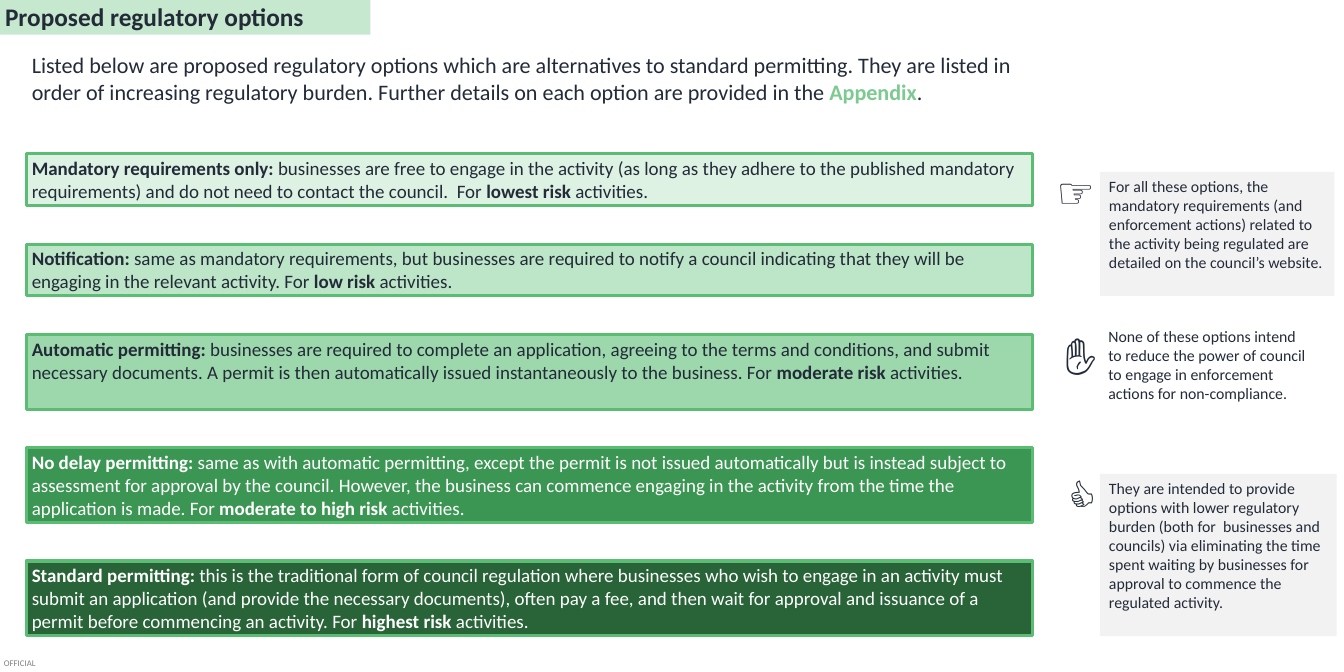
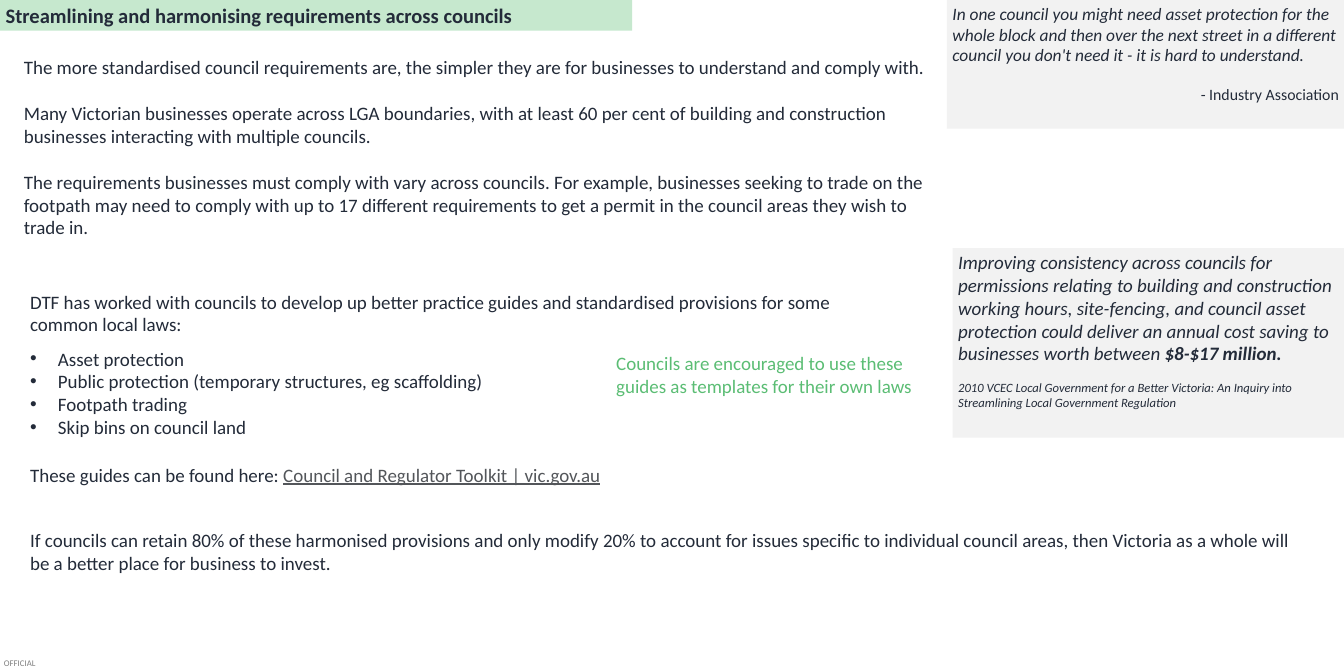
import pptx
import pptx.util
import pptx.dml.color
import pptx.enum.shapes
import pptx.enum.text
import lxml.etree
from dataclasses import dataclass
from typing import NamedTuple, Optional

# Shared look
SCALE = 9144  # EMU per px, 100 px to the inch
FONT = "Calibri"
INK, WHITE, GREY = "232B39", "FFFFFF", "F2F2F2"
BAND, EDGE, LIGHT = "C6E8CE", "5BBD74", "7CCA90"
LINK, MUTED = "53565A", "7F7F7F"
ALIGN = pptx.enum.text.PP_ALIGN


class Box(NamedTuple):
    left: int
    top: int
    width: int
    height: int


@dataclass(frozen=True)
class Run:
    text: str
    bold: bool = False
    slant: bool = False
    under: bool = False
    color: str = ""


@dataclass(frozen=True)
class Para:
    runs: list[Run]
    size: int = 24
    gap: float = 0  # points above
    right: bool = False
    bullet: bool = False


@dataclass(frozen=True)
class Option:
    name: str
    body: str
    risk: str
    fill: str
    color: str
    height: int


@dataclass(frozen=True)
class Note:
    icon: str
    spot: Box
    text: str
    box: Box
    fill: str
    pad: tuple[int, int]


def px(count: int) -> int:
    return pptx.util.Emu(count * SCALE)


def rgb(code: str) -> pptx.dml.color.RGBColor:
    return pptx.dml.color.RGBColor.from_string(code)


def plain(text: str, size: int = 24, gap: float = 0) -> Para:
    return Para([Run(text)], size, gap)


def dot(para) -> None:
    """Give a paragraph a hanging bullet."""
    props = para._p.get_or_add_pPr()
    props.set("marL", str(px(49)))
    props.set("indent", str(-px(49)))
    space = "{http://schemas.openxmlformats.org/drawingml/2006/main}"
    lxml.etree.SubElement(props, space + "buFont", typeface="Arial")
    lxml.etree.SubElement(props, space + "buChar", char="•")


def write(shape, paras: list[Para], color: str, pad: tuple[int, int]) -> None:
    frame = shape.text_frame
    frame.word_wrap = True
    frame.vertical_anchor = pptx.enum.text.MSO_ANCHOR.TOP
    frame.margin_left = frame.margin_right = px(pad[0])
    frame.margin_top = frame.margin_bottom = px(pad[1])
    for index, item in enumerate(paras):
        para = frame.add_paragraph() if index else frame.paragraphs[0]
        para.alignment = ALIGN.RIGHT if item.right else ALIGN.LEFT
        para.space_before = pptx.util.Pt(item.gap)
        if item.bullet:
            dot(para)
        for part in item.runs:
            run = para.add_run()
            run.text = part.text
            font = run.font
            font.name = FONT
            font.size = pptx.util.Pt(item.size)
            font.bold = part.bold
            font.italic = part.slant
            font.underline = part.under
            font.color.rgb = rgb(part.color or color)


def label(slide, box: Box, paras: list[Para], color: str = INK,
          pad: tuple[int, int] = (10, 5)) -> None:
    write(slide.shapes.add_textbox(*map(px, box)), paras, color, pad)


def panel(slide, box: Box, paras: list[Para], fill: str, color: str = INK,
          edge: Optional[str] = None, pad: tuple[int, int] = (10, 5)) -> None:
    kind = pptx.enum.shapes.MSO_SHAPE.RECTANGLE
    shape = slide.shapes.add_shape(kind, *map(px, box))
    shape.shadow.inherit = False
    shape.fill.solid()
    shape.fill.fore_color.rgb = rgb(fill)
    if edge:
        shape.line.color.rgb = rgb(edge)
        shape.line.width = pptx.util.Pt(4)
    else:
        shape.line.fill.background()
    write(shape, paras, color, pad)


def start(deck, title: str, box: Box, size: int):
    """Add a slide with its footer mark and title band."""
    slide = deck.slides.add_slide(deck.slide_layouts[6])
    label(slide, Box(7, 1156, 59, 18), [plain("OFFICIAL", 11)], MUTED, (0, 0))
    panel(slide, box, [Para([Run(title, bold=True)], size)], BAND)
    return slide


# Slide 1 content
OPTIONS = [
    Option("Mandatory requirements only: ",
           "businesses are free to engage in the activity (as long as they adhere to the "
           "published mandatory requirements) and do not need to contact the council.  For ",
           "lowest risk ", "DEF2E3", INK, 91),
    Option("Notification: ",
           "same as mandatory requirements, but businesses are required to notify a council "
           "indicating that they will be engaging in the relevant activity. For ",
           "low risk ", "BDE5C7", INK, 91),
    Option("Automatic permitting: ",
           "businesses are required to complete an application, agreeing to the terms and "
           "conditions, and submit necessary documents. A permit is then automatically issued "
           "instantaneously to the business. For ",
           "moderate risk ", "9DD7AC", INK, 131),
    Option("No delay permitting: ",
           "same as with automatic permitting, except the permit is not issued automatically "
           "but is instead subject to assessment for approval by the council. However, the "
           "business can commence engaging in the activity from the time the application is "
           "made. For ",
           "moderate to high risk ", "3C9653", WHITE, 131),
    Option("Standard permitting:",
           " this is the traditional form of council regulation where businesses who wish to "
           "engage in an activity must submit an application (and provide the necessary "
           "documents), often pay a fee, and then wait for approval and issuance of a permit "
           "before commencing an activity. For ",
           "highest risk ", "286437", WHITE, 131),
]
NOTES = [
    Note("☞", Box(1847, 286, 91, 101),
         "For all these options, the mandatory requirements (and enforcement actions) related "
         "to the activity being regulated are detailed on the council’s website.",
         Box(1933, 302, 412, 218), GREY, (16, 8)),
    Note("✋", Box(1861, 569, 91, 101),
         "None of these options intend to reduce the power of council to engage in "
         "enforcement actions for non-compliance.",
         Box(1938, 569, 378, 212), "", (10, 5)),
    Note("👍", Box(1867, 821, 71, 101),
         "They are intended to provide options with lower regulatory burden (both for  "
         "businesses and councils) via eliminating the time spent waiting by businesses for "
         "approval to commence the regulated activity.",
         Box(1933, 833, 416, 285), GREY, (16, 8)),
]


def choices(deck) -> None:
    slide = start(deck, "Proposed regulatory options", Box(-1, -3, 652, 64), 32)
    label(slide, Box(46, 86, 1828, 151), [Para([
        Run("Listed below are proposed regulatory options which are alternatives to standard "
            "permitting. They are listed in order of increasing regulatory burden. Further "
            "details on each option are provided in the "),
        Run("Appendix", bold=True, color=LIGHT),
        Run("."),
    ], 28)])

    # Options, stacked with equal gaps
    top, gap = 270, 68
    for item in OPTIONS:
        runs = [Run(item.name, bold=True), Run(item.body),
                Run(item.risk, bold=True), Run("activities.")]
        panel(slide, Box(46, top, 1768, item.height), [Para(runs)],
              item.fill, item.color, EDGE)
        top += item.height + gap

    # Side notes with icons
    for note in NOTES:
        paras = [plain(note.text, 20)]
        if note.fill:
            panel(slide, note.box, paras, note.fill, pad=note.pad)
        else:
            label(slide, note.box, paras, pad=note.pad)
        label(slide, note.spot, [plain(note.icon, 54)])


# Slide 2 content
REASONS = [
    "The more standardised council requirements are, the simpler they are for businesses to "
    "understand and comply with.",
    "Many Victorian businesses operate across LGA boundaries, with at least 60 per cent of "
    "building and construction businesses interacting with multiple councils.",
    "The requirements businesses must comply with vary across councils. For example, "
    "businesses seeking to trade on the footpath may need to comply with up to 17 different "
    "requirements to get a permit in the council areas they wish to trade in.",
]
GUIDES = ["Asset protection", "Public protection (temporary structures, eg scaffolding)",
          "Footpath trading", "Skip bins on council land"]


def harmony(deck) -> None:
    slide = start(deck, "Streamlining and harmonising requirements across councils",
                  Box(0, 0, 1111, 54), 26)

    # Main column
    label(slide, Box(32, 93, 1609, 374),
          [plain(text, gap=29.3 if index else 0) for index, text in enumerate(REASONS)])
    label(slide, Box(43, 505, 1464, 91), [plain(
        "DTF has worked with councils to develop up better practice guides and standardised "
        "provisions for some common local laws:")])
    label(slide, Box(43, 605, 997, 172), [Para([Run(text)], bullet=True) for text in GUIDES])
    label(slide, Box(1073, 613, 568, 131), [plain(
        "Councils are encouraged to use these guides as templates for their own laws")], EDGE)
    label(slide, Box(43, 809, 1609, 50), [Para([
        Run("These guides can be found here: "),
        Run("Council and Regulator Toolkit | vic.gov.au", under=True, color=LINK),
    ])])
    label(slide, Box(43, 924, 2242, 91), [plain(
        "If councils can retain 80% of these harmonised provisions and only modify 20% to "
        "account for issues specific to individual council areas, then Victoria as a whole "
        "will be a better place for business to invest.")])

    # Quotes
    panel(slide, Box(1664, 0, 699, 226), [
        Para([Run("In one council you might need asset protection for the whole block and then "
                  "over the next street in a different council you don't need it - it is hard "
                  "to understand.", slant=True)], 22),
        Para([Run("- Industry Association")], 20, 24.4, right=True),
    ], GREY)
    panel(slide, Box(1674, 436, 688, 333), [
        Para([Run("Improving consistency across councils for permissions relating to building "
                  "and construction working hours, site-fencing, and council asset "
                  "protection could deliver an annual cost saving to businesses worth "
                  "between ", slant=True),
              Run("$8-$17 million.", bold=True, slant=True)]),
        Para([Run("2010 VCEC Local Government for a Better Victoria: An Inquiry into "
                  "Streamlining Local Government Regulation", slant=True)], 16, 19.5),
    ], GREY)


def main() -> None:
    deck = pptx.Presentation()
    deck.slide_width, deck.slide_height = px(2362), px(1181)
    choices(deck)
    harmony(deck)
    deck.save("out.pptx")


if __name__ == "__main__":
    main()
